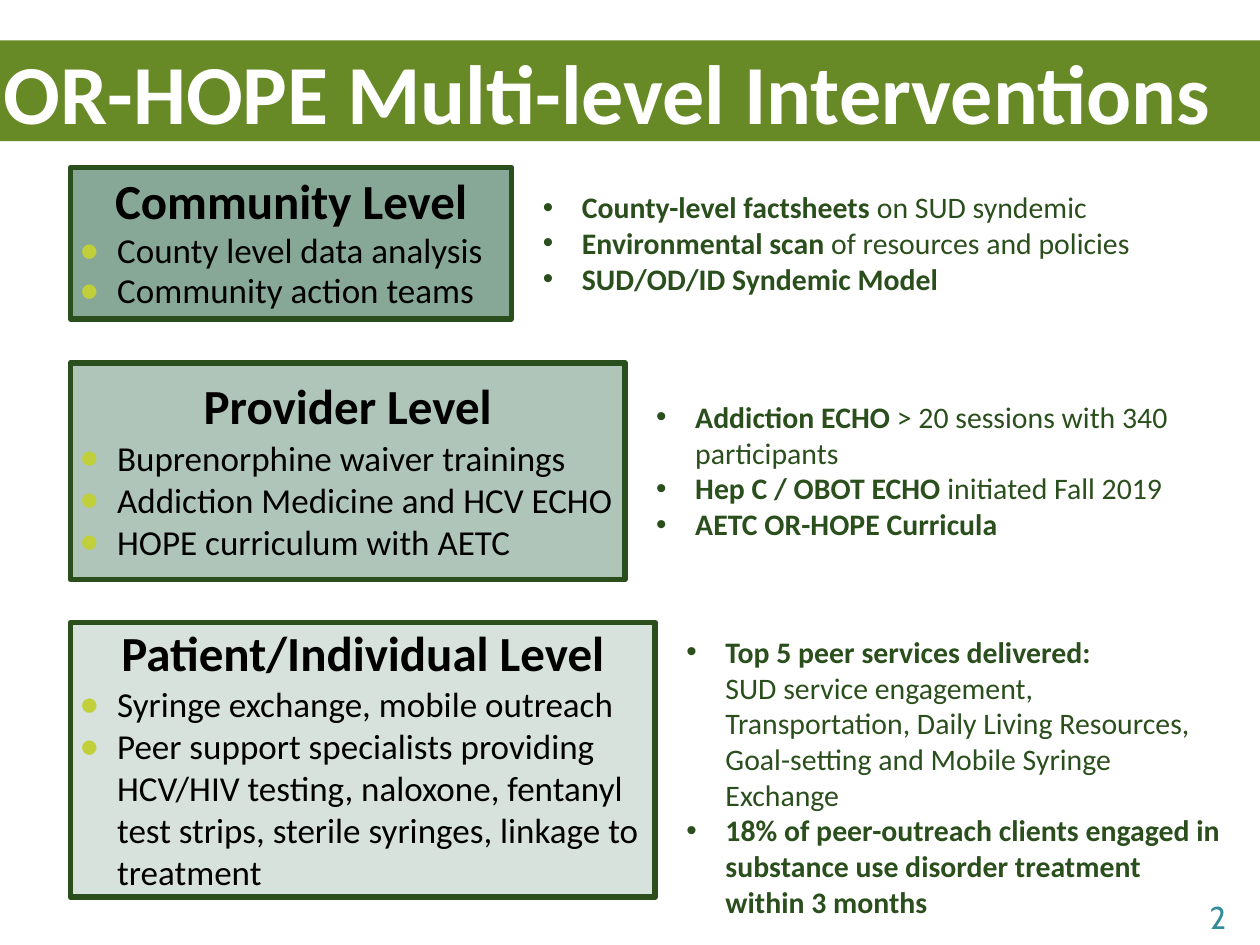
from dataclasses import dataclass

from lxml import etree
from pptx import Presentation
from pptx.dml.color import RGBColor
from pptx.enum.shapes import MSO_SHAPE
from pptx.enum.text import MSO_ANCHOR, MSO_AUTO_SIZE, PP_ALIGN
from pptx.oxml.ns import qn
from pptx.util import Inches, Pt

RECT = MSO_SHAPE.RECTANGLE
MIDDLE = MSO_ANCHOR.MIDDLE
TOP = MSO_ANCHOR.TOP
LEFT, CENTER, RIGHT = PP_ALIGN.LEFT, PP_ALIGN.CENTER, PP_ALIGN.RIGHT
NO_FIT, GROW = MSO_AUTO_SIZE.NONE, MSO_AUTO_SIZE.SHAPE_TO_FIT_TEXT
TITLE_ONLY = 5


@dataclass(frozen=True)
class Theme:
    font: str = "Calibri"
    number_font: str = "Cabin"
    band: str = "678A26"
    white: str = "FFFFFF"
    black: str = "000000"
    dark: str = "2A4F1C"
    lime: str = "C0CF3A"
    teal: str = "328C99"
    title_size: int = 48
    heading_size: int = 28
    body_size: int = 20
    note_size: int = 17
    number_size: int = 18
    border: float = 3.25


class SlideBuilder:
    def __init__(self, slide, theme):
        self.s = slide
        self.theme = theme

    def run(self, p, text, size, color, bold=False, font=None):
        r = p.add_run()
        r.text = text
        r.font.size = Pt(size)
        r.font.name = font or self.theme.font
        r.font.bold = bold
        r.font.color.rgb = RGBColor.from_string(color)

    def bullet(self, p, char, color, indent, percent=100):
        pPr = p._p.get_or_add_pPr()
        pPr.set("marL", str(Inches(indent)))
        pPr.set("indent", str(-Inches(indent)))
        clr = etree.SubElement(pPr, qn("a:buClr"))
        etree.SubElement(clr, qn("a:srgbClr")).set("val", color)
        etree.SubElement(pPr, qn("a:buSzPct")).set("val", str(percent * 1000))
        etree.SubElement(pPr, qn("a:buFont")).set("typeface", "Arial")
        etree.SubElement(pPr, qn("a:buChar")).set("char", char)

    def frame(self, sp, anchor, fit=NO_FIT):
        tf = sp.text_frame
        tf.word_wrap = True
        tf.auto_size = fit
        tf.vertical_anchor = anchor
        return tf

    def paragraph(self, tf, first, align=LEFT):
        p = tf.paragraphs[0] if first else tf.add_paragraph()
        p.alignment = align
        return p

    def rect(self, x, y, w, h, fill):
        sp = self.s.shapes.add_shape(RECT, Inches(x), Inches(y), Inches(w), Inches(h))
        sp.shadow.inherit = False
        sp.fill.solid()
        sp.fill.fore_color.rgb = RGBColor.from_string(fill)
        sp.line.fill.background()
        return sp

    def text_box(self, x, y, w, h):
        return self.s.shapes.add_textbox(Inches(x), Inches(y), Inches(w), Inches(h))

    def title(self, text):
        t = self.theme
        band = self.rect(0, 0.32, 10, 0.8, t.band)
        sp = self.s.shapes.title
        sp.element.addprevious(band.element)
        sp.left, sp.top = Inches(-0.18), Inches(0.33)
        sp.width, sp.height = Inches(10), Inches(0.79)
        p = self.paragraph(self.frame(sp, MIDDLE), True, CENTER)
        self.run(p, text, t.title_size, t.white, True)

    def number(self, text):
        t = self.theme
        tf = self.frame(self.text_box(9, 7.08, 0.83, 0.27), TOP)
        p = self.paragraph(tf, True, RIGHT)
        self.run(p, text, t.number_size, t.teal, font=t.number_font)

    def level_box(self, x, y, w, h, fill, heading, items, spacing):
        t = self.theme
        sp = self.rect(x, y, w, h, fill)
        sp.line.color.rgb = RGBColor.from_string(t.dark)
        sp.line.width = Pt(t.border)
        tf = self.frame(sp, MIDDLE)
        tf.margin_left = tf.margin_right = Inches(0.07)
        tf.margin_top = tf.margin_bottom = Inches(0.04)
        p = self.paragraph(tf, True, CENTER)
        p.line_spacing = 0.95
        self.run(p, heading, t.heading_size, t.black, True)
        for item in items:
            p = self.paragraph(tf, False)
            self.bullet(p, "●", t.lime, 0.3, 95)
            p.line_spacing = spacing
            self.run(p, item, t.body_size, t.black)

    def notes(self, x, y, w, h, items):
        t = self.theme
        tf = self.frame(self.text_box(x, y, w, h), TOP, GROW)
        for i, (lead, rest, broken) in enumerate(items):
            p = self.paragraph(tf, i == 0)
            self.bullet(p, "•", t.dark, 0.31)
            self.run(p, lead, t.note_size, t.dark, True)
            if broken:
                p.add_line_break()
            if rest:
                self.run(p, rest, t.note_size, t.dark)


LEVELS = [
    dict(
        top=1.33, size=(3.5, 1.2), fill="87A896", spacing=0.95,
        heading="Community Level",
        items=["County level data analysis", "Community action teams"],
        notes_size=(5.38, 0.96),
        notes=[
            ("County-level factsheets ", "on SUD syndemic", False),
            ("Environmental scan ", "of resources and policies", False),
            ("SUD/OD/ID Syndemic Model", "", False),
        ],
    ),
    dict(
        top=2.88, size=(4.4, 1.72), fill="AFC5B9", spacing=1.0,
        heading="Provider Level",
        items=[
            "Buprenorphine waiver trainings",
            "Addiction Medicine and HCV ECHO",
            "HOPE curriculum with AETC",
        ],
        notes_size=(4.64, 1.25),
        notes=[
            ("Addiction ECHO ", "> 20 sessions with 340 participants", False),
            ("Hep C / OBOT ECHO ", "initiated Fall 2019", False),
            ("AETC OR-HOPE Curricula", "", False),
        ],
    ),
    dict(
        top=4.94, size=(4.64, 2.18), fill="D7E2DC", spacing=1.0,
        heading="Patient/Individual Level",
        items=[
            "Syringe exchange, mobile outreach",
            "Peer support specialists providing HCV/HIV testing, naloxone, "
            "fentanyl test strips, sterile syringes, linkage to treatment",
        ],
        notes_size=(4.47, 2.1),
        notes=[
            ("Top 5 peer services delivered:",
             "SUD service engagement, Transportation, Daily Living Resources, "
             "Goal-setting and Mobile Syringe Exchange", True),
            ("18% of peer-outreach clients engaged in substance use disorder "
             "treatment within 3 months", "", False),
        ],
    ),
]
BOX_LEFT = 0.56
GAP = 0.15


def main():
    prs = Presentation()
    prs.slide_width, prs.slide_height = Inches(10), Inches(7.5)
    slide = prs.slides.add_slide(prs.slide_layouts[TITLE_ONLY])
    b = SlideBuilder(slide, Theme())
    b.title("OR-HOPE Multi-level Interventions")
    b.number("2")
    for level in LEVELS:
        w, h = level["size"]
        nw, nh = level["notes_size"]
        b.level_box(BOX_LEFT, level["top"], w, h, level["fill"],
                    level["heading"], level["items"], level["spacing"])
        b.notes(BOX_LEFT + w + GAP, level["top"] + (h - nh) / 2, nw, nh, level["notes"])
    prs.save("out.pptx")


if __name__ == "__main__":
    main()
